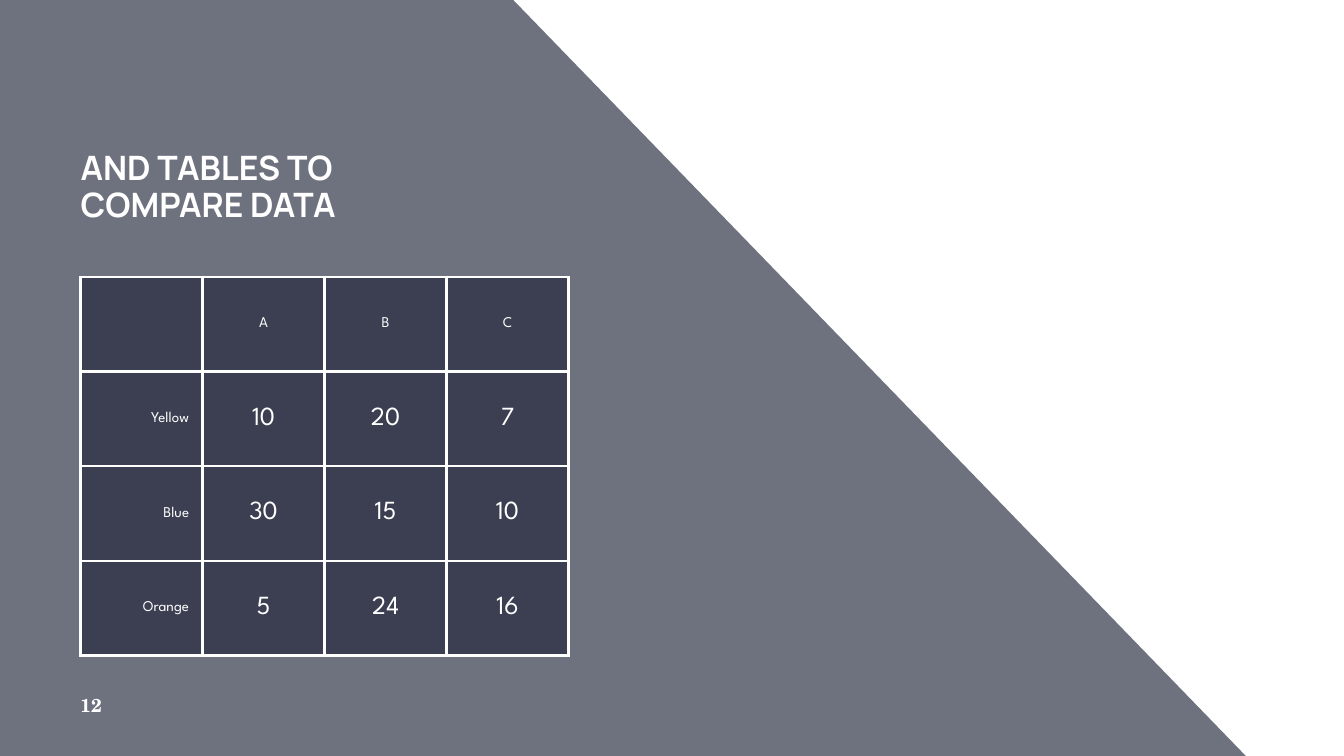
from dataclasses import dataclass

import lxml.etree
import pptx
import pptx.dml.color
import pptx.enum.text
import pptx.oxml.ns
import pptx.util

WIDTH, HEIGHT = 10, 5.625
NAVY, WHITE = "212539", "FFFFFF"
OPACITY = 65
ALIGN = pptx.enum.text.PP_ALIGN
ANCHOR = pptx.enum.text.MSO_ANCHOR
inches = pptx.util.Inches


@dataclass(frozen=True)
class TextStyle:
    font: str
    size: float
    bold: bool = False
    align: ALIGN = ALIGN.LEFT


@dataclass(frozen=True)
class Box:
    """Position and size in inches."""
    left: float
    top: float
    width: float
    height: float

    def lengths(self) -> tuple:
        return tuple(inches(v) for v in (self.left, self.top, self.width, self.height))


TITLE = TextStyle("Manrope", 18, bold=True)
PAGE_NUMBER = TextStyle("TeX Gyre Schola", 10, bold=True)
COLUMN_LABEL = TextStyle("League Spartan", 8, align=ALIGN.CENTER)
ROW_LABEL = TextStyle("League Spartan", 8, align=ALIGN.RIGHT)
FIGURE = TextStyle("League Spartan", 14, align=ALIGN.CENTER)

MARGIN = 0.05 * WIDTH
PADDING = 0.1
TITLE_BOX = Box(MARGIN, 1.08, 2.61, 0.69)
TABLE_BOX = Box(MARGIN + PADDING, 2.06, 3.63, 2.82)
NUMBER_BOX = Box(MARGIN, 5.11, 0.6, 0.27)

ROWS = [
    ("", "A", "B", "C"),
    ("Yellow", "10", "20", "7"),
    ("Blue", "30", "15", "10"),
    ("Orange", "5", "24", "16"),
]


def rgb(colour: str) -> pptx.dml.color.RGBColor:
    return pptx.dml.color.RGBColor.from_string(colour)


def add_element(parent, tag: str, **attributes: str):
    return lxml.etree.SubElement(parent, pptx.oxml.ns.qn(tag), attributes)


def fill_translucent(fill, properties, colour: str, opacity: int) -> None:
    fill.solid()
    fill.fore_color.rgb = rgb(colour)
    colour_element = properties.find(".//" + pptx.oxml.ns.qn("a:srgbClr"))
    add_element(colour_element, "a:alpha", val=str(opacity * 1000))


def write(frame, text: str, style: TextStyle) -> None:
    frame.text = text
    paragraph = frame.paragraphs[0]
    paragraph.alignment = style.align
    for run in paragraph.runs:
        run.font.name = style.font
        run.font.size = pptx.util.Pt(style.size)
        run.font.bold = style.bold
        run.font.color.rgb = rgb(WHITE)


def set_frame(frame, anchor: ANCHOR) -> None:
    frame.word_wrap = True
    frame.auto_size = pptx.enum.text.MSO_AUTO_SIZE.NONE
    frame.vertical_anchor = anchor
    frame.margin_left = frame.margin_right = inches(PADDING)
    frame.margin_top = frame.margin_bottom = inches(PADDING)


def border_cell(properties, colour: str, points: float) -> None:
    for index, side in enumerate(("a:lnL", "a:lnR", "a:lnT", "a:lnB")):
        line = add_element(properties, side, w=str(pptx.util.Pt(points)))
        add_element(add_element(line, "a:solidFill"), "a:srgbClr", val=colour)
        properties.insert(index, line)


def draw_panel(slide) -> None:
    builder = slide.shapes.build_freeform(inches(0.381 * WIDTH), inches(-0.01), scale=1.0)
    corners = [(0, 0), (0, HEIGHT), (0.927 * WIDTH, HEIGHT)]
    builder.add_line_segments([(inches(x), inches(y)) for x, y in corners], close=True)
    panel = builder.convert_to_shape()
    panel.shadow.inherit = False
    fill_translucent(panel.fill, panel._element.spPr, NAVY, OPACITY)
    panel.line.fill.background()
    # Behind the title placeholder
    slide.shapes._spTree.insert(2, panel._element)


def draw_title(slide, text: str, box: Box) -> None:
    title = slide.shapes.title
    title.left, title.top, title.width, title.height = box.lengths()
    set_frame(title.text_frame, ANCHOR.BOTTOM)
    write(title.text_frame, text, TITLE)
    title.text_frame.paragraphs[0].line_spacing = 0.9


def draw_table(slide, rows: list, box: Box) -> None:
    table = slide.shapes.add_table(len(rows), len(rows[0]), *box.lengths()).table
    table.first_row = table.horz_banding = False
    for r, row in enumerate(rows):
        for c, text in enumerate(row):
            cell = table.cell(r, c)
            properties = cell._tc.get_or_add_tcPr()
            fill_translucent(cell.fill, properties, NAVY, OPACITY)
            border_cell(properties, WHITE, 1.5)
            cell.vertical_anchor = ANCHOR.MIDDLE
            cell.margin_left = cell.margin_right = inches(PADDING)
            cell.margin_top = cell.margin_bottom = inches(0.07)
            style = COLUMN_LABEL if r == 0 else ROW_LABEL if c == 0 else FIGURE
            if text:
                write(cell.text_frame, text, style)


def draw_page_number(slide, number: str, box: Box) -> None:
    frame = slide.shapes.add_textbox(*box.lengths()).text_frame
    set_frame(frame, ANCHOR.MIDDLE)
    write(frame, number, PAGE_NUMBER)


def main() -> None:
    deck = pptx.Presentation()
    deck.slide_width, deck.slide_height = inches(WIDTH), inches(HEIGHT)
    title_only = deck.slide_layouts[5]
    slide = deck.slides.add_slide(title_only)
    draw_panel(slide)
    draw_title(slide, "AND TABLES TO COMPARE DATA", TITLE_BOX)
    draw_table(slide, ROWS, TABLE_BOX)
    draw_page_number(slide, "12", NUMBER_BOX)
    deck.save("out.pptx")


if __name__ == "__main__":
    main()
